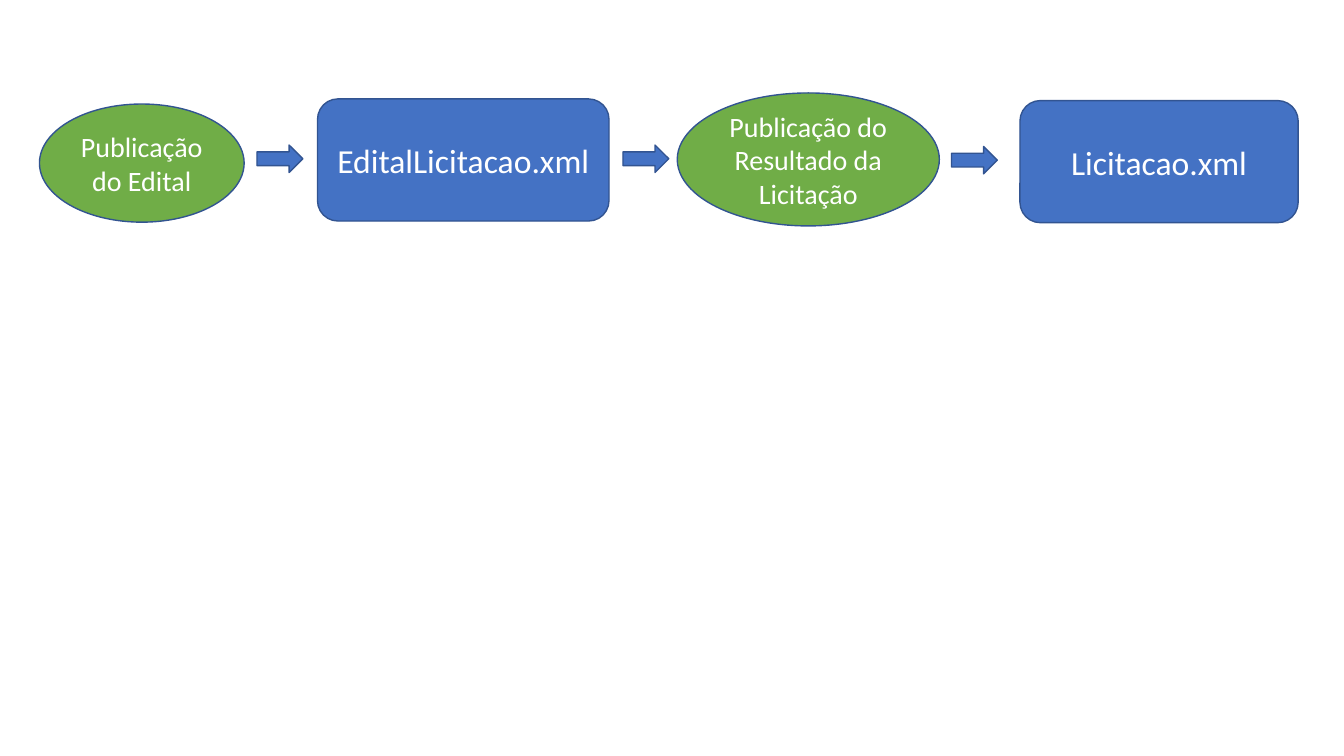
"""Build a slide showing the flow from tender notice to bidding XML files."""
from pptx import Presentation
from pptx.dml.color import RGBColor
from pptx.enum import shapes, text
from pptx.util import Pt

GREEN, BLUE, OUTLINE, WHITE = "70AD47", "4472C4", "325491", "FFFFFF"
EVENT = shapes.MSO_SHAPE.OVAL
DOCUMENT = shapes.MSO_SHAPE.ROUNDED_RECTANGLE
ARROW = shapes.MSO_SHAPE.RIGHT_ARROW


def color(value):
    return RGBColor.from_string(value)


def add_box(page, kind, fill, left, top, width, height):
    box = page.shapes.add_shape(kind, Pt(left), Pt(top), Pt(width), Pt(height))
    box.shadow.inherit = False
    box.fill.solid()
    box.fill.fore_color.rgb = color(fill)
    box.line.color.rgb = color(OUTLINE)
    box.line.width = Pt(1)
    return box


deck = Presentation()
deck.slide_width, deck.slide_height = Pt(960), Pt(540)
page = deck.slides.add_slide(deck.slide_layouts[6])

steps = [
    (EVENT, "Publicação do Edital", 28.2, 74.3, 146.2, 84.4),
    (DOCUMENT, "EditalLicitacao.xml", 226.8, 70.7, 208.2, 87.2),
    (EVENT, "Publicação do Resultado da Licitação", 483.8, 66.4, 187.2, 95),
    (DOCUMENT, "Licitacao.xml", 728.6, 71.9, 198.7, 87.2),
]
for kind, label, left, top, width, height in steps:
    fill, size = (GREEN, 20) if kind == EVENT else (BLUE, 24)
    box = add_box(page, kind, fill, left, top, width, height)
    frame = box.text_frame
    frame.word_wrap = True
    frame.vertical_anchor = text.MSO_ANCHOR.MIDDLE
    para = frame.paragraphs[0]
    para.text = label
    para.alignment = text.PP_ALIGN.CENTER
    para.font.name = "Calibri"
    para.font.size = Pt(size)
    para.font.color.rgb = color(WHITE)

for left, top in [(183.6, 103.6), (445, 103.6), (679.7, 104.6)]:
    add_box(page, ARROW, BLUE, left, top, 32.7, 19.6)

deck.save("out.pptx")
